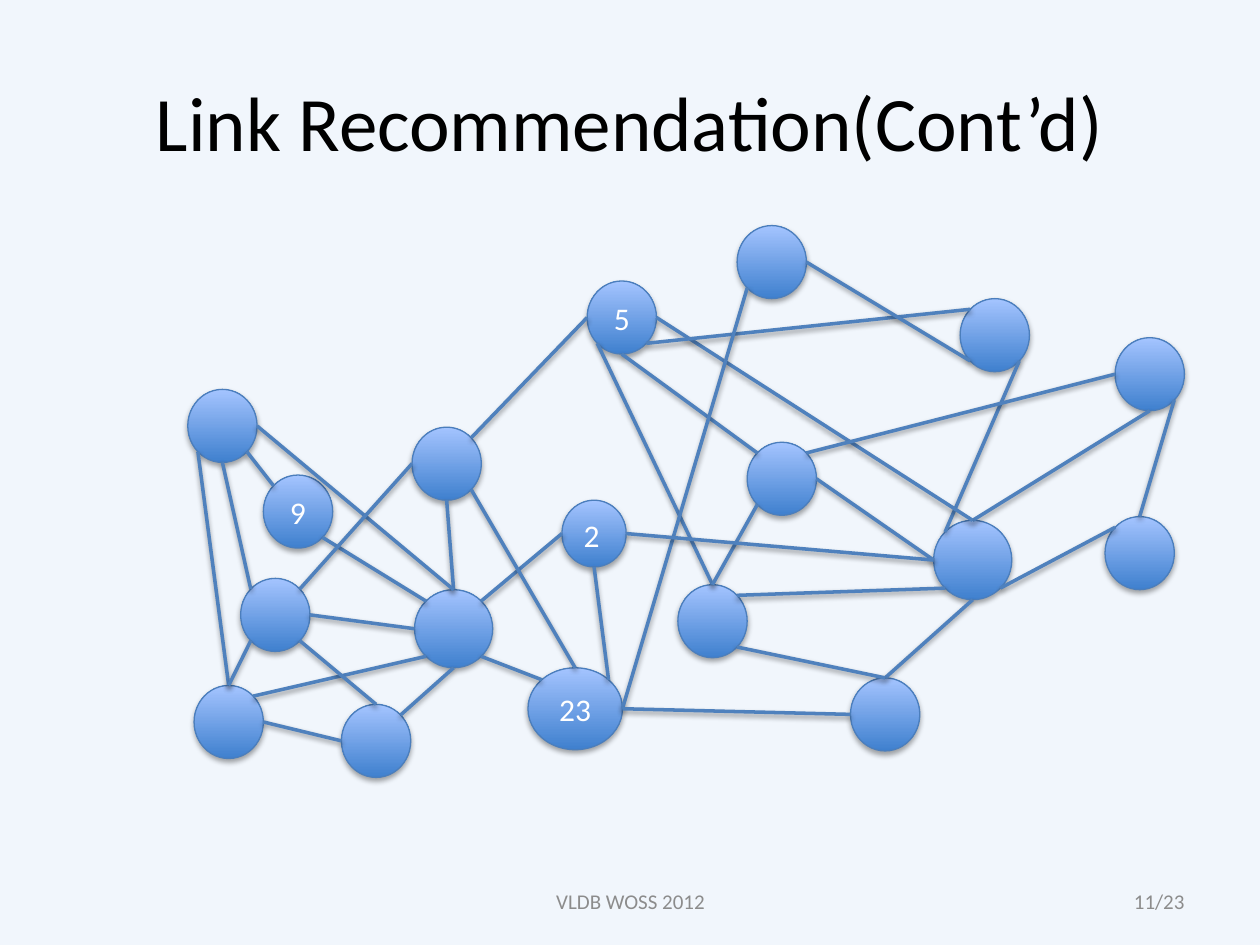
from dataclasses import dataclass
from math import cos, radians, sin

from lxml.etree import SubElement
from pptx import Presentation
from pptx.dml.color import RGBColor
from pptx.enum.shapes import MSO_CONNECTOR, MSO_SHAPE
from pptx.enum.text import MSO_ANCHOR, PP_ALIGN
from pptx.oxml.ns import qn
from pptx.util import Inches, Pt


@dataclass(frozen=True)
class Theme:
    font: str = "Calibri"
    background: str = "F1F6FC"
    title: str = "000000"
    label: str = "FFFFFF"
    footer: str = "8C8C8C"
    node_bottom: str = "3F80CE"
    node_top: str = "A4C4FF"
    node_line: str = "4B7EBC"
    link: str = "4F81BD"
    shadow: str = "000000"
    title_size: int = 44
    label_size: int = 18
    footer_size: int = 12


THEME = Theme()
NODE_SIZE = (0.55, 0.58)

# Connection sites of an ellipse, counter-clockwise from the top
SITES = ["T", "TL", "L", "BL", "B", "BR", "R", "TR"]

# Nodes: left, top and, where it differs from NODE_SIZE, width and height.
# Numeric names are shown as labels; letters only identify the node.
NODES = {
    "2": (4.46, 3.97, 0.51, 0.53),
    "5": (4.66, 2.23),
    "9": (2.09, 3.77),
    "23": (4.19, 5.30, 0.75, 0.65),
    "A": (1.49, 3.09),
    "B": (1.91, 4.59),
    "C": (1.54, 5.44),
    "D": (2.71, 5.59),
    "E": (3.29, 4.68, 0.62, 0.62),
    "F": (3.27, 3.39),
    "G": (5.85, 1.79),
    "H": (6.75, 5.38),
    "J": (5.93, 3.51),
    "K": (7.41, 4.13, 0.62, 0.63),
    "M": (8.85, 2.68),
    "N": (8.77, 4.10),
    "P": (7.62, 2.37),
    "Q": (5.38, 4.64),
}

# Links: start node and site, end node and site
LINKS = [
    # Left cluster
    ("F", "B", "E", "T"), ("E", "BR", "23", "TL"), ("E", "TR", "2", "L"),
    ("E", "B", "D", "TR"), ("B", "R", "E", "L"), ("9", "BR", "E", "TL"),
    ("A", "R", "E", "T"), ("E", "BL", "C", "TR"), ("A", "BR", "9", "TL"),
    ("B", "TR", "F", "L"), ("F", "BR", "23", "T"), ("2", "B", "23", "TR"),
    ("A", "B", "B", "TL"), ("B", "BR", "D", "T"), ("D", "L", "C", "R"),
    ("A", "BL", "C", "T"), ("B", "BL", "C", "T"),
    # Right cluster
    ("M", "B", "K", "T"), ("K", "BR", "N", "TL"), ("J", "R", "K", "L"),
    ("P", "BR", "K", "TL"), ("5", "R", "K", "T"), ("K", "BL", "Q", "TR"),
    ("5", "BR", "P", "TL"), ("J", "TR", "M", "L"), ("M", "BR", "N", "T"),
    ("5", "B", "J", "TL"), ("5", "BL", "Q", "T"), ("J", "BL", "Q", "T"),
    ("G", "R", "P", "BL"), ("K", "B", "H", "T"), ("Q", "BR", "H", "T"),
    # Between the clusters
    ("23", "R", "G", "BL"), ("5", "L", "F", "TR"), ("K", "L", "2", "R"),
    ("23", "R", "H", "L"),
]


def rgb(value):
    return RGBColor.from_string(value)


def write(frame, text, size, color, align, anchor):
    frame.word_wrap = True
    frame.vertical_anchor = anchor
    para = frame.paragraphs[0]
    para.text = text
    para.alignment = align
    para.font.name = THEME.font
    para.font.size = Pt(size)
    para.font.color.rgb = rgb(color)


def add_shadow(shape, distance, opacity):
    """Soft shadow falling straight down; call after the line is set."""
    effects = shape._element.spPr.get_or_add_effectLst()
    shadow = SubElement(effects, qn("a:outerShdw"), blurRad=str(Pt(3.1)),
                        dist=str(Pt(distance)), dir="5400000", rotWithShape="0")
    color = SubElement(shadow, qn("a:srgbClr"), val=THEME.shadow)
    SubElement(color, qn("a:alpha"), val=str(opacity * 1000))


def add_node(slide, name, left, top, width=NODE_SIZE[0], height=NODE_SIZE[1]):
    node = slide.shapes.add_shape(MSO_SHAPE.OVAL, Inches(left), Inches(top),
                                  Inches(width), Inches(height))
    node.fill.gradient()
    node.fill.gradient_angle = 90
    for stop, color in zip(node.fill.gradient_stops,
                           (THEME.node_bottom, THEME.node_top)):
        stop.color.rgb = rgb(color)
    node.line.color.rgb = rgb(THEME.node_line)
    node.line.width = Pt(0.75)
    node.shadow.inherit = False
    add_shadow(node, 1.8, 35)
    if name.isdigit():
        # Node 2 alone keeps its label at the top left
        align, anchor = ((PP_ALIGN.LEFT, MSO_ANCHOR.TOP) if name == "2"
                         else (PP_ALIGN.CENTER, MSO_ANCHOR.MIDDLE))
        write(node.text_frame, name, THEME.label_size, THEME.label, align, anchor)
    return node


def site_point(node, site):
    angle = radians(90 + 45 * SITES.index(site))
    x = node.left + node.width / 2 * (1 + cos(angle))
    y = node.top + node.height / 2 * (1 - sin(angle))
    return round(x), round(y)


def add_link(slide, start, start_site, end, end_site):
    link = slide.shapes.add_connector(
        MSO_CONNECTOR.STRAIGHT,
        *site_point(start, start_site), *site_point(end, end_site))
    link.line.color.rgb = rgb(THEME.link)
    link.line.width = Pt(2)
    add_shadow(link, 1.6, 38)
    # Join both ends to ellipse sites, which number more than four
    joints = link._element.nvCxnSpPr.cNvCxnSpPr
    for tag, node, site in (("a:stCxn", start, start_site),
                            ("a:endCxn", end, end_site)):
        SubElement(joints, qn(tag), id=str(node.shape_id),
                   idx=str(SITES.index(site)))


def add_title(slide, text):
    title = slide.shapes.title
    title.left, title.top = Inches(0.5), Inches(0.33)
    title.width, title.height = Inches(9), Inches(1.25)
    write(title.text_frame, text, THEME.title_size, THEME.title,
          PP_ALIGN.CENTER, MSO_ANCHOR.MIDDLE)


def add_footer(slide, text, left, width, align):
    box = slide.shapes.add_textbox(Inches(left), Inches(6.95),
                                   Inches(width), Inches(0.4))
    write(box.text_frame, text, THEME.footer_size, THEME.footer,
          align, MSO_ANCHOR.MIDDLE)


def main():
    deck = Presentation()
    deck.slide_width, deck.slide_height = Inches(10), Inches(7.5)
    slide = deck.slides.add_slide(deck.slide_layouts[5])
    slide.background.fill.solid()
    slide.background.fill.fore_color.rgb = rgb(THEME.background)

    add_title(slide, "Link Recommendation(Cont’d)")

    # Network
    nodes = {name: add_node(slide, name, *place) for name, place in NODES.items()}
    for start, start_site, end, end_site in LINKS:
        add_link(slide, nodes[start], start_site, nodes[end], end_site)

    # Footer
    add_footer(slide, "VLDB WOSS 2012", 3.42, 3.17, PP_ALIGN.CENTER)
    add_footer(slide, "11/23", 7.17, 2.33, PP_ALIGN.RIGHT)

    deck.save("out.pptx")


if __name__ == "__main__":
    main()
